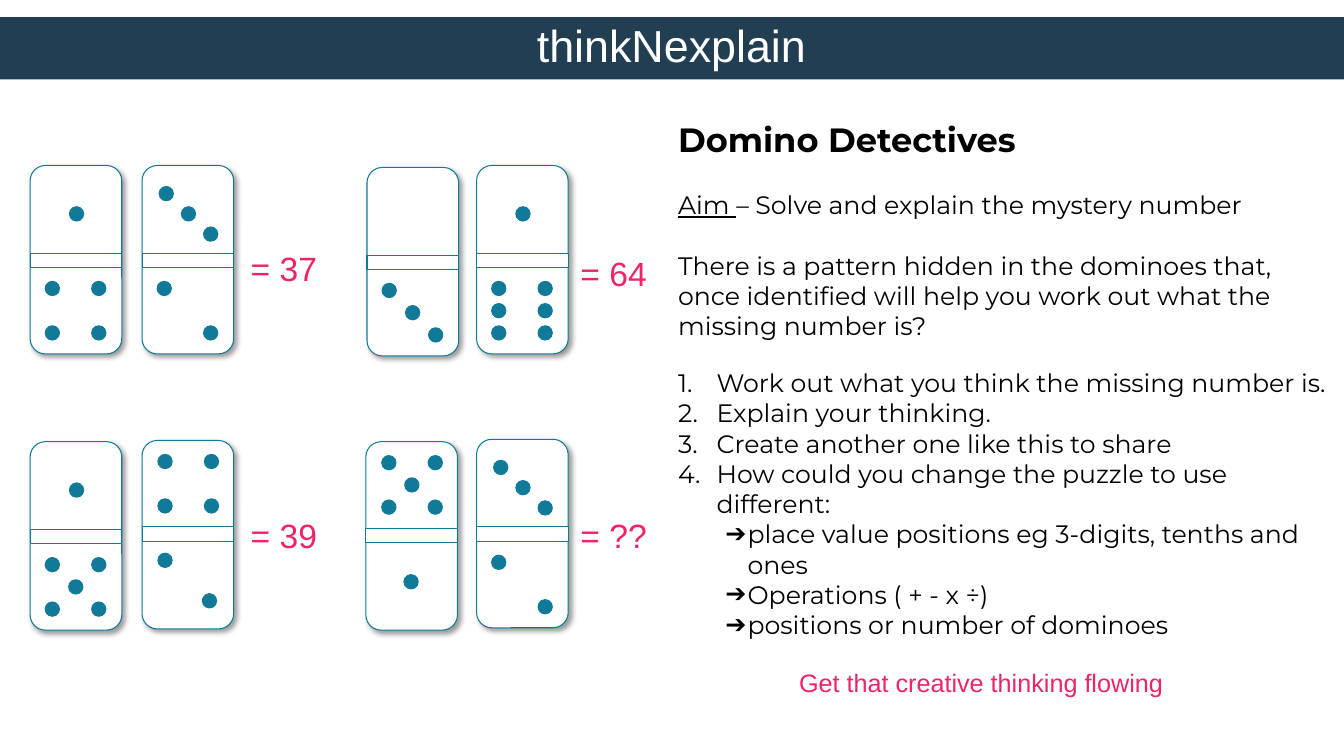
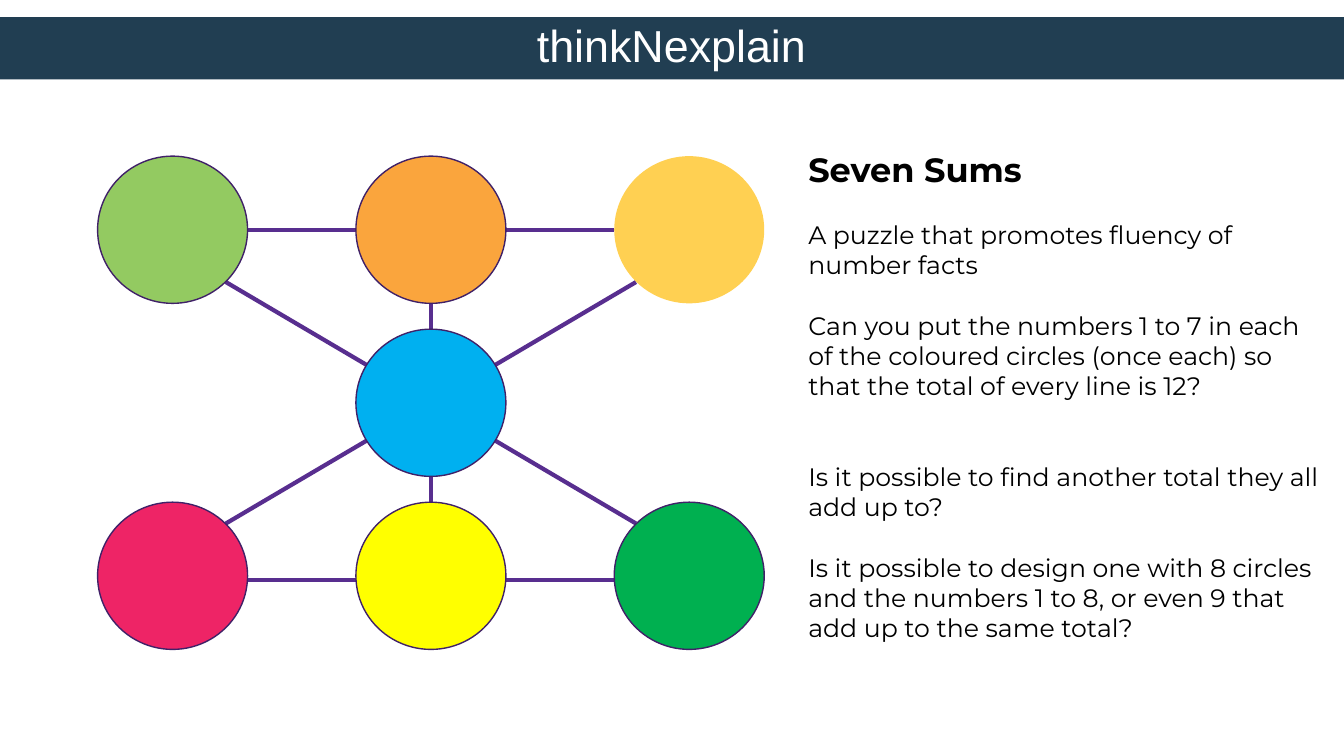
from lxml import etree
from pptx import Presentation
from pptx import util as u
from pptx.dml.color import RGBColor
from pptx.enum import shapes, text
from pptx.oxml.ns import qn

# Shared look
NAVY, TEAL, PINK, PLUM, EDGE = "213E52", "107A98", "EE2466", "582E8F", "402168"
WHITE, BLACK = "FFFFFF", "000000"
SANS, BODY = "Arial", "Montserrat"
TITLE = "thinkNexplain"
GAP = 21.6  # one body line, in points
RECT, ROUND, OVAL = (shapes.MSO_SHAPE.RECTANGLE, shapes.MSO_SHAPE.ROUNDED_RECTANGLE,
                     shapes.MSO_SHAPE.OVAL)

# Text columns: runs, space before, list kind
DOMINO = [
    ("Domino Detectives", 0, "head"),
    (["Aim ", "– Solve and explain the mystery number"], GAP, None),
    ("There is a pattern hidden in the dominoes that, once identified will help "
     "you work out what the missing number is?", GAP, None),
    ("Work out what you think the missing number is.", 19.2, "num"),
    ("Explain your thinking.", 0, "num"),
    ("Create another one like this to share", 0, "num"),
    ("How could you change the puzzle to use different:", 0, "num"),
    ("place value positions eg 3-digits, tenths and ones", 0, "arrow"),
    ("Operations ( + - x ÷)", 0, "arrow"),
    ("positions or number of dominoes", 0, "arrow"),
]
SEVEN = [
    ("Seven Sums", 0, "head"),
    ("A puzzle that promotes fluency of number facts", GAP, None),
    ("Can you put the numbers 1 to 7 in each of the coloured circles (once each) "
     "so that the total of every line is 12?", GAP, None),
    ("Is it possible to find another total they all add up to?", 2 * GAP, None),
    ("Is it possible to design one with 8 circles and the numbers 1 to 8, or even "
     "9 that add up to the same total?", GAP, None),
]

# Dominoes: left, top, upper pips, lower pips, turned upside down
TILES = [
    (0.76, 4.17, 1, 4, False), (3.58, 4.17, 3, 2, False),
    (0.76, 11.13, 1, 5, False), (3.58, 11.1, 4, 2, True),
    (9.25, 4.22, 0, 3, False), (12.01, 4.17, 1, 6, False),
    (9.22, 11.13, 5, 1, True), (12.01, 11.07, 3, 2, False),
]
SUMS = [("= 37", 6.07, 6.12), ("= 39", 6.07, 12.85),
        ("= 64", 14.38, 6.25), ("= ??", 14.38, 12.85)]
WIDE, HIGH, PIP, BAR = 2.31, 4.75, 0.36, 2.21
UPPER = ((0.43, 0.99, 1.55), (0.53, 1.04, 1.55))  # pip columns, rows
LOWER = ((0.38, 0.97, 1.55), (2.92, 3.48, 4.04))
DIAG, FOUR = [(0, 0), (2, 2)], [(0, 0), (2, 0), (0, 2), (2, 2)]
MID = [(1, 1)]
FACES = {0: [], 1: MID, 2: DIAG, 3: DIAG + MID, 4: FOUR, 5: FOUR + MID,
         6: FOUR + [(0, 1), (2, 1)]}

# Circles: column, row, fill, outline
RINGS = [
    (0, 0, "93CA61", EDGE), (1, 0, "FAA53D", EDGE), (1, 1, "00B0F0", EDGE),
    (2, 2, "00B050", EDGE), (1, 2, "FFFF00", EDGE), (2, 0, "FFD052", None),
    (0, 2, PINK, EDGE),
]
# Links: column, row and the point on the rim, in radii, for both ends
LINKS = [
    ((2, 2, -0.71, -0.71), (0, 0, 0.71, 0.71)),
    ((0, 2, 0.71, -0.71), (2, 0, -0.71, 0.71)),
    ((1, 0, 0, 1), (1, 2, 0, -1)),
    ((0, 2, 1, 0.06), (2, 2, -1, 0.06)),
    ((0, 0, 1, 0), (2, 0, -1, 0)),
]
RING_W, RING_H = 3.78, 3.71


def rgb(code):
    return RGBColor.from_string(code)


def cms(*nums):
    return [u.Cm(n) for n in nums]


def shape(home, kind, box, fill, line=None, width=0.75):
    item = home.add_shape(kind, *cms(*box))
    item.shadow.inherit = False
    item.fill.solid()
    item.fill.fore_color.rgb = rgb(fill)
    if line:
        item.line.color.rgb = rgb(line)
        item.line.width = u.Pt(width)
    else:
        item.line.fill.background()
    return item


def style(para, face, size, color, bold=False):
    font = para.font
    font.name, font.size, font.bold = face, u.Pt(size), bold
    font.color.rgb = rgb(color)


def frame(slide, box):
    body = slide.shapes.add_textbox(*cms(*box)).text_frame
    body.word_wrap = True
    return body


def label(slide, words, box, size, color, center=False, middle=False):
    body = frame(slide, box)
    if middle:
        body.vertical_anchor = text.MSO_ANCHOR.MIDDLE
    para = body.paragraphs[0]
    para.text = words
    if center:
        para.alignment = text.PP_ALIGN.CENTER
    style(para, SANS, size, color)
    return body


def bullet(para, kind):
    left, hang = (0.97, 0.97) if kind == "num" else (1.75, 0.56)
    props = para._p.get_or_add_pPr()
    props.set("marL", str(u.Cm(left)))
    props.set("indent", str(-u.Cm(hang)))
    if kind == "num":
        etree.SubElement(props, qn("a:buAutoNum"), type="arabicPeriod")
    else:
        etree.SubElement(props, qn("a:buFont"), typeface=SANS)
        etree.SubElement(props, qn("a:buChar"), char="➔")


def column(slide, box, items):
    body = frame(slide, box)
    for i, (words, gap, kind) in enumerate(items):
        para = body.add_paragraph() if i else body.paragraphs[0]
        if kind in ("num", "arrow"):
            bullet(para, kind)
        runs = [words] if isinstance(words, str) else words
        for part in runs:
            para.add_run().text = part
        if len(runs) > 1:
            para.runs[0].font.underline = True
        if gap:
            para.space_before = u.Pt(gap)
        head = kind == "head"
        style(para, BODY, 24 if head else 18, BLACK, head)


def start(deck):
    slide = deck.slides.add_slide(deck.slide_layouts[6])
    shape(slide.shapes, RECT, (0, 0.43, 33.87, 1.57), NAVY)
    label(slide, TITLE, (4.62, 0.33, 24.61, 1.63), 32, WHITE, center=True)
    return slide


def cast(item):
    # Soft shadow to the lower right
    glow = etree.SubElement(item._element.spPr.find(qn("a:effectLst")),
                            qn("a:outerShdw"), blurRad=str(u.Pt(4)), dist=str(u.Pt(3)),
                            dir="2700000", algn="tl", rotWithShape="0")
    tint = etree.SubElement(glow, qn("a:srgbClr"), val=BLACK)
    etree.SubElement(tint, qn("a:alpha"), val="40000")


def tile(slide, left, top, upper, lower, turned):
    home = slide.shapes.add_group_shape().shapes

    def turn(x, y, w):
        return (WIDE - w - x, HIGH - PIP - y) if turned else (x, y)

    cast(shape(home, ROUND, (left, top, WIDE, HIGH), WHITE, TEAL))
    shape(home, RECT, (left, top + turn(0, BAR, WIDE)[1], WIDE, PIP), WHITE, TEAL)
    if turned:
        upper, lower = lower, upper
    for count, (cols, rows) in ((upper, UPPER), (lower, LOWER)):
        for c, r in FACES[count]:
            x, y = turn(cols[c], rows[r], PIP)
            shape(home, OVAL, (left + x, top + y, PIP, PIP), TEAL, TEAL)


def spot(col, row, dx=0, dy=0):
    # Centre of a circle, moved by a share of its radii
    return (4.35 + 6.51 * col + dx * RING_W / 2, 5.79 + 4.36 * row + dy * RING_H / 2)


def link(slide, tail, head):
    line = slide.shapes.add_connector(shapes.MSO_CONNECTOR.STRAIGHT,
                                      *cms(*spot(*tail), *spot(*head)))
    line.line.color.rgb = rgb(PLUM)
    line.line.width = u.Pt(3)
    etree.SubElement(line._element.spPr, qn("a:effectLst"))


def main():
    deck = Presentation()
    deck.slide_width, deck.slide_height = cms(33.87, 19.05)

    # Domino puzzle
    slide = start(deck)
    column(slide, (16.84, 2.87, 17.02, 13.51), DOMINO)
    for data in TILES:
        tile(slide, *data)
    for words, x, y in SUMS:
        label(slide, words, (x, y, 2.46, 1.27), 24, PINK, middle=True)
    note = label(slide, "Get that creative thinking flowing",
                 (17.7, 16.56, 14.05, 1.27), 18, PINK, center=True)
    note.margin_top = note.margin_bottom = u.Cm(0.25)

    # Circle puzzle
    slide = start(deck)
    for ends in LINKS:
        link(slide, *ends)
    for col, row, fill, line in RINGS:
        x, y = spot(col, row, -1, -1)
        shape(slide.shapes, OVAL, (x, y, RING_W, RING_H), fill, line, 1)
    column(slide, (20.12, 3.63, 13.59, 14.27), SEVEN)

    deck.save("out.pptx")


if __name__ == "__main__":
    main()
